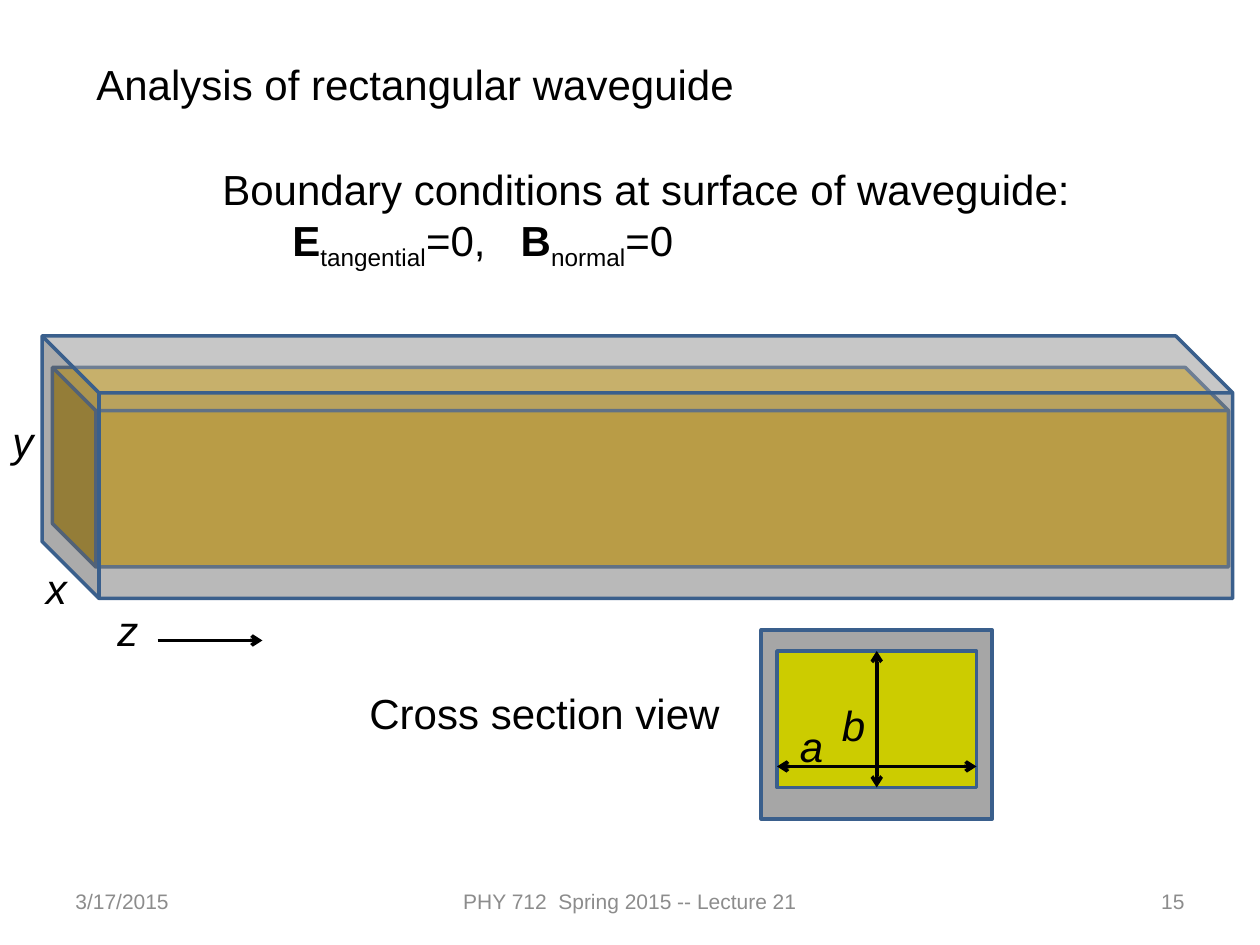
import pptx
import pptx.util
import pptx.dml.color
import pptx.enum.shapes
import pptx.enum.text
import pptx.oxml
import pptx.oxml.ns

Pt = pptx.util.Pt
Kind = pptx.enum.shapes.MSO_SHAPE
Side = pptx.enum.text.PP_ALIGN
Hold = pptx.enum.text.MSO_ANCHOR
Fit = pptx.enum.text.MSO_AUTO_SIZE

HUES = {
    "ink": "000000",
    "foot": "8C8C8C",
    "edge": "3A5F8C",
    "wall": "A6A6A6",
    "core": "CCCC00",
    "gold": "FFC000",
    "shell": "808080",
}


class Deck:
    """Holds the style and the current slide, and draws each kind of element."""

    def __init__(self, wide, high):
        self.show = pptx.Presentation()
        self.show.slide_width, self.show.slide_height = Pt(wide), Pt(high)
        self.slide = self.show.slides.add_slide(self.show.slide_layouts[6])
        self.face = "Arial"
        self.width = Pt(2)

    def hue(self, name):
        return pptx.dml.color.RGBColor.from_string(HUES[name])

    def apply(self, item, form):
        for key, value in form.items():
            setattr(item, key, value)

    def node(self, host, tag, **form):
        child = pptx.oxml.parse_xml(f"<a:{tag} {pptx.oxml.ns.nsdecls('a')}/>")
        for key, value in form.items():
            child.set(key, str(value))
        host.append(child)
        return child

    def text(self, box, rows, hue="ink", size=24, align=Side.LEFT, tabs=(), **form):
        frame = self.slide.shapes.add_textbox(*map(Pt, box)).text_frame
        self.apply(frame, {"word_wrap": True, "auto_size": Fit.SHAPE_TO_FIT_TEXT, **form})
        for spot, row in enumerate(rows):
            para = frame.add_paragraph() if spot else frame.paragraphs[0]
            para.alignment = align
            if tabs and "\t" in row[0][0]:
                stops = self.node(para._p.get_or_add_pPr(), "tabLst")
                for stop in tabs:
                    self.node(stops, "tab", pos=int(Pt(stop)), algn="l")
            for words, look in row:
                run = para.add_run()
                run.text = words
                self.apply(run.font, {
                    "name": self.face,
                    "size": Pt(size),
                    "bold": look == "bold",
                    "italic": look == "slant",
                })
                run.font.color.rgb = self.hue(hue)
                if look == "sub":
                    run.font._element.set("baseline", "-25000")

    def shape(self, kind, box, fill, **form):
        part = self.slide.shapes.add_shape(kind, *map(Pt, box))
        part.shadow.inherit = False
        part.fill.solid()
        part.fill.fore_color.rgb = self.hue(fill)
        part.line.color.rgb = self.hue("edge")
        part.line.width = self.width
        self.apply(part, form)
        return part

    def cube(self, box, fill, alpha=100):
        part = self.shape(Kind.CUBE, box, fill, rotation=180)
        part.adjustments[0] = 0.217
        part._element.spPr.find(pptx.oxml.ns.qn("a:xfrm")).set("flipV", "1")
        if alpha < 100:
            tint = part.fill._xPr.find(".//" + pptx.oxml.ns.qn("a:srgbClr"))
            self.node(tint, "alpha", val=alpha * 1000)

    def arrow(self, start, end, tips=("tailEnd",)):
        straight = pptx.enum.shapes.MSO_CONNECTOR.STRAIGHT
        link = self.slide.shapes.add_connector(straight, *map(Pt, start + end))
        link.line.color.rgb = self.hue("ink")
        link.line.width = self.width
        for tip in tips:
            self.node(link.line._get_or_add_ln(), tip, type="arrow")
        self.node(link._element.spPr, "effectLst")


def main():
    deck = Deck(720, 540)
    both = ("headEnd", "tailEnd")

    deck.shape(Kind.RECTANGLE, (435, 360, 132, 108), "wall")
    deck.text((48, 30, 516, 36), [[("Analysis of rectangular waveguide", "")]])
    deck.text((120, 90, 576, 65.4), [
        [("Boundary conditions at surface of waveguide:", "")],
        [("\t", ""), ("E", "bold"), ("tangential", "sub"), ("=0,\t", ""),
         ("B", "bold"), ("normal", "sub"), ("=0", "")],
    ], tabs=(40, 170.5))
    deck.shape(Kind.RECTANGLE, (444, 372, 114, 78), "core")
    deck.cube((30, 210, 672, 114), "gold")
    deck.cube((24, 192, 680.4, 150), "shell", 55)
    deck.text((204, 389.5, 222, 36), [[("Cross section view", "")]])

    deck.arrow((90, 366), (150, 366))
    deck.arrow((444, 438), (558, 438), both)
    deck.arrow((501, 450), (501, 372), both)

    names = {"z": (60, 342), "x": (19.2, 318), "y": (0, 234), "b": (474, 396), "a": (450, 408)}
    for name, (left, top) in names.items():
        deck.text((left, top, 180, 36), [[(name, "slant")]])

    feet = [
        ("3/17/2015", 36, 168, Side.LEFT),
        ("PHY 712  Spring 2015 -- Lecture 21", 246, 228, Side.CENTER),
        ("15", 516, 168, Side.RIGHT),
    ]
    for words, left, wide, align in feet:
        deck.text((left, 500.5, wide, 28.75), [[(words, "")]], "foot", 12, align,
                  vertical_anchor=Hold.MIDDLE, auto_size=Fit.NONE)

    deck.show.save("out.pptx")


if __name__ == "__main__":
    main()
